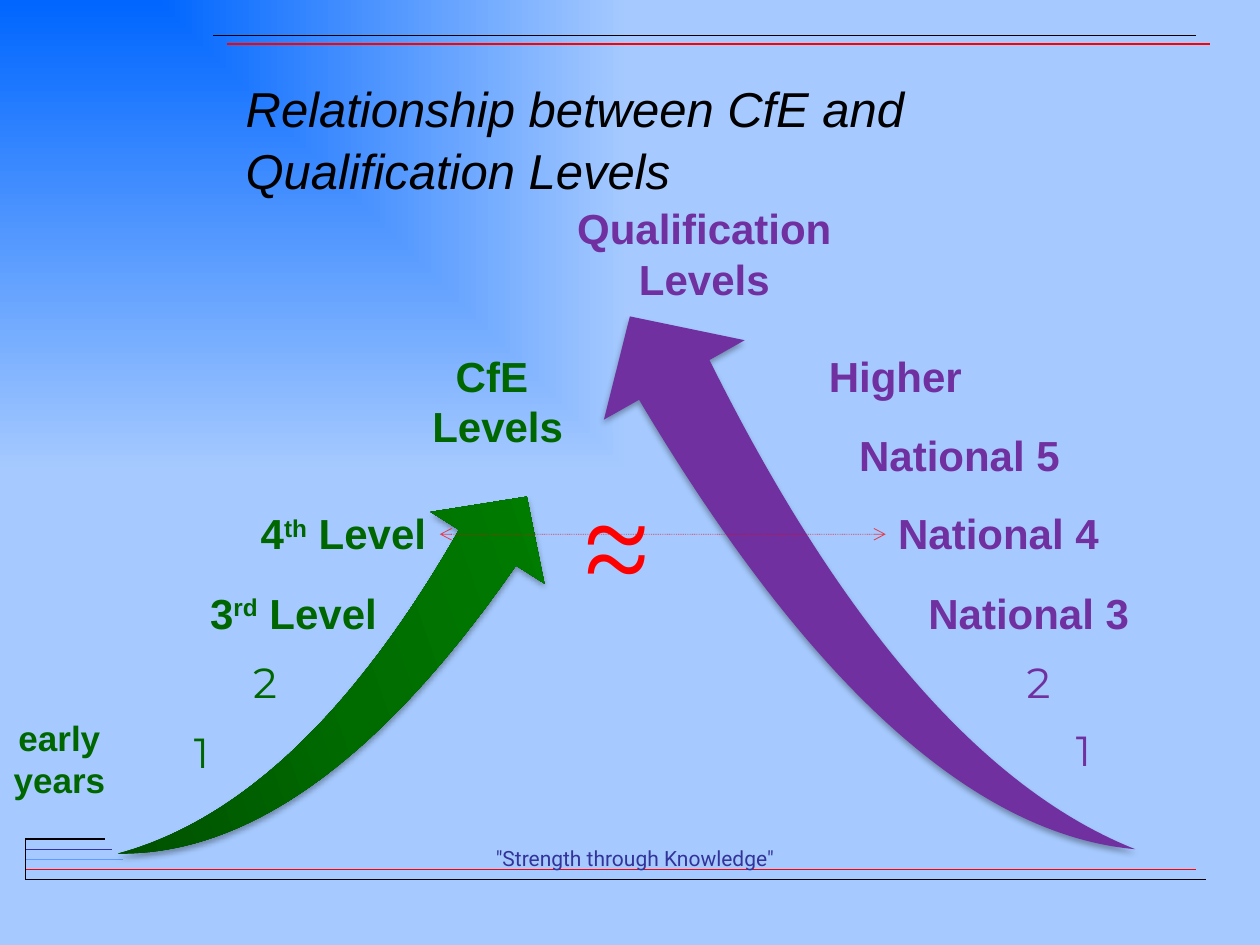
from lxml import etree
from pptx import Presentation
from pptx.dml.color import RGBColor
from pptx.enum.dml import MSO_LINE
from pptx.enum.shapes import MSO_CONNECTOR, MSO_SHAPE
from pptx.enum.text import MSO_ANCHOR, MSO_AUTO_SIZE, PP_ALIGN
from pptx.util import Inches, Pt

STRAIGHT = MSO_CONNECTOR.STRAIGHT
SWOOSH = MSO_SHAPE.SWOOSH_ARROW
DOTTED = MSO_LINE.ROUND_DOT
TOP = MSO_ANCHOR.TOP
GROW, FIXED = MSO_AUTO_SIZE.SHAPE_TO_FIT_TEXT, MSO_AUTO_SIZE.NONE
LEFT, CENTER, RIGHT = PP_ALIGN.LEFT, PP_ALIGN.CENTER, PP_ALIGN.RIGHT
NS = 'xmlns:a="http://schemas.openxmlformats.org/drawingml/2006/main"'
GREEN, PURPLE, RED, BLACK, NAVY = "006600", "7030A0", "FF0000", "000000", "333399"


def color(value):
    return RGBColor.from_string(value)


def gradient(stops, direction):
    gs = "".join(f'<a:gs pos="{pos * 1000}"><a:srgbClr val="{c}"/></a:gs>' for pos, c in stops)
    return etree.fromstring(f'<a:gradFill {NS} rotWithShape="1"><a:gsLst>{gs}</a:gsLst>{direction}</a:gradFill>')


prs = Presentation()
prs.slide_width, prs.slide_height = Inches(10), Inches(7.5)
s = prs.slides.add_slide(prs.slide_layouts[5])

fill = s.background.fill
fill.solid()
bg = s.background._cSld.bg.bgPr
bg.replace(bg[0], gradient(
    [(0, "0066FF"), (100, "A6CAFF")],
    '<a:path path="rect"><a:fillToRect r="100000" b="100000"/></a:path>'))

rules = [
    (1.69, 0.28, 9.49, 0.28, BLACK),
    (1.8, 0.35, 9.6, 0.35, RED),
    (0.2, 6.9, 9.49, 6.9, RED),
    (0.2, 6.82, 0.98, 6.82, "609CFE"),
    (0.2, 6.98, 9.57, 6.98, BLACK),
    (0.2, 6.74, 0.89, 6.74, NAVY),
    (0.2, 6.66, 0.2, 6.98, BLACK),
    (0.2, 6.66, 0.83, 6.66, BLACK),
]
for x1, y1, x2, y2, c in rules:
    line = s.shapes.add_connector(STRAIGHT, Inches(x1), Inches(y1), Inches(x2), Inches(y2))
    line.line.color.rgb = color(c)
    line.line.width = Pt(0.75)
    etree.SubElement(line._element.spPr, "{http://schemas.openxmlformats.org/drawingml/2006/main}effectLst")

title = s.shapes.title
title.left, title.top, title.width, title.height = [Inches(v) for v in (1.85, 0.52, 7.54, 0.55)]
tf = title.text_frame
tf.text = "Relationship between CfE and\vQualification Levels"
tf.word_wrap = True
tf.auto_size = FIXED
tf.vertical_anchor = TOP
tf.margin_top = Inches(0.08)
p = tf.paragraphs[0]
p.alignment = LEFT
p.line_spacing = 1.05
for r in p.runs:
    for name, value in {"size": Pt(28), "name": "Arial", "italic": True}.items():
        setattr(r.font, name, value)
    r.font.color.rgb = color(BLACK)

swooshes = [
    (4.04, 3.45, 5.46, 2.55, 247, PURPLE),
    (0.77, 4.39, 3.96, 2.12, 115.7, GREEN),
]
for x, y, w, h, angle, c in swooshes:
    sp = s.shapes.add_shape(SWOOSH, Inches(x), Inches(y), Inches(w), Inches(h))
    sp.rotation = angle
    sp.adjustments[0] = sp.adjustments[1] = 0.25
    sp.line.fill.background()
    sp.fill.solid()
    sp.fill.fore_color.rgb = color(c)
    spPr = sp._element.spPr
    if c == GREEN:
        spPr.xfrm.set("flipH", "1")
        solid = spPr.find("{*}solidFill")
        spPr.replace(solid, gradient(
            [(0, "004C00"), (50, "006C00"), (100, "008000")], '<a:lin ang="18900000" scaled="1"/>'))
    spPr.append(etree.fromstring(
        f'<a:effectLst {NS}><a:outerShdw blurRad="{Pt(3.5)}" dist="{Pt(2.2)}" dir="5400000" rotWithShape="0">'
        '<a:srgbClr val="000000"><a:alpha val="32000"/></a:srgbClr></a:outerShdw></a:effectLst>'))

link = s.shapes.add_connector(STRAIGHT, Inches(3.49), Inches(4.24), Inches(7.03), Inches(4.24))
link.line.color.rgb = color(RED)
link.line.width = Pt(0.5)
link.line.dash_style = DOTTED
ln = link.line._ln
ln.find(".//{*}srgbClr").append(etree.fromstring(f'<a:alpha {NS} val="68000"/>'))
for end in ("headEnd", "tailEnd"):
    ln.append(etree.fromstring(f'<a:{end} {NS} type="arrow"/>'))
etree.SubElement(link._element.spPr, "{http://schemas.openxmlformats.org/drawingml/2006/main}effectLst")

labels = [
    (3.43, 6.66, 3.22, 0.3, ['"Strength through Knowledge"'], 12, "Roboto", NAVY, CENTER),
    (0, 5.64, 1.02, 0.77, ["early ", "years "], 20, "Arial", GREEN, CENTER),
    (4.45, 1.56, 2.28, 0.91, ["Qualification", "Levels"], 24, "Arial", PURPLE, CENTER),
    (2.81, 2.73, 2.28, 0.91, ["CfE ", "Levels"], 24, "Arial", GREEN, CENTER),
    (0.7, 3.98, 2.78, 0.5, ["4^th^ Level"], 24, "Arial", GREEN, RIGHT),
    (0.23, 4.61, 2.86, 0.5, ["3^rd^ Level"], 24, "Arial", GREEN, RIGHT),
    (1.91, 5.16, 0.71, 0.57, ["2"], 24, "Montserrat", GREEN, LEFT),
    (1.44, 5.72, 0.71, 0.57, ["1"], 24, "Montserrat", GREEN, LEFT),
    (6.48, 2.73, 2.27, 0.5, ["Higher"], 24, "Arial", PURPLE, LEFT),
    (6.72, 3.36, 2.27, 0.5, ["National 5"], 24, "Arial", PURPLE, LEFT),
    (7.03, 3.98, 2.27, 0.5, ["National 4"], 24, "Arial", PURPLE, LEFT),
    (7.27, 4.61, 2.34, 0.5, ["National 3"], 24, "Arial", PURPLE, LEFT),
    (8.05, 5.16, 0.71, 0.57, ["2"], 24, "Montserrat", PURPLE, LEFT),
    (8.44, 5.7, 0.71, 0.57, ["1"], 24, "Montserrat", PURPLE, LEFT),
    (4.51, 3.67, 0.79, 1.31, ["≈"], 72, "Montserrat", RED, LEFT),
]
for x, y, w, h, lines, size, font, c, align in labels:
    tf = s.shapes.add_textbox(Inches(x), Inches(y), Inches(w), Inches(h)).text_frame
    tf.word_wrap = font != "Roboto"
    tf.auto_size = GROW if tf.word_wrap else FIXED
    for i, text in enumerate(lines):
        p = tf.add_paragraph() if i else tf.paragraphs[0]
        p.alignment = align
        for j, part in enumerate(text.split("^")):
            r = p.add_run()
            r.text = part
            for name, value in {"size": Pt(size), "name": font, "bold": font == "Arial"}.items():
                setattr(r.font, name, value)
            r.font.color.rgb = color(c)
            if j == 1:
                r.font._element.set("baseline", "30000")

prs.save("out.pptx")
